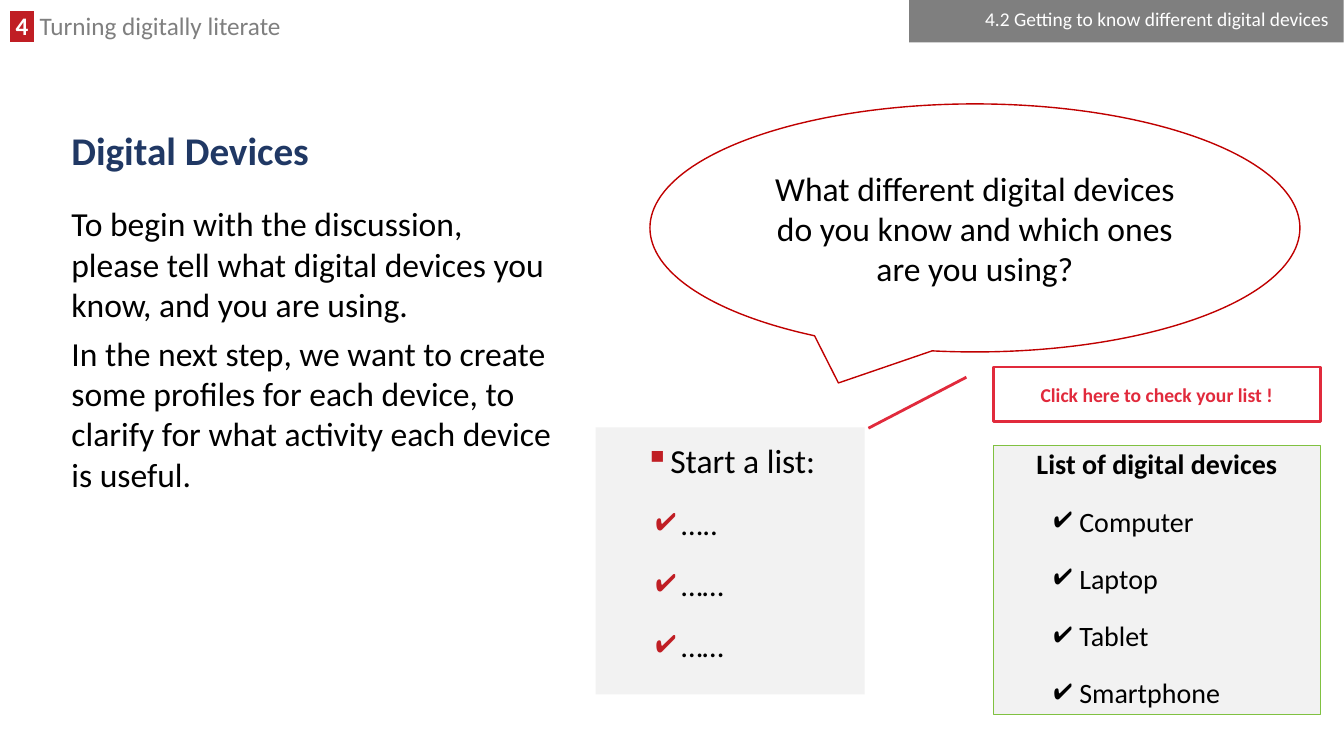
"""Builds the discussion slide about digital devices."""
from lxml import etree
from pptx import Presentation
from pptx.dml.color import RGBColor
from pptx.enum.shapes import MSO_SHAPE
from pptx.enum.text import MSO_ANCHOR, PP_ALIGN
from pptx.oxml.ns import qn
from pptx.util import Cm, Pt

RECTANGLE = MSO_SHAPE.RECTANGLE
SPEECH_BUBBLE = MSO_SHAPE.OVAL_CALLOUT
LINE_CALLOUT = MSO_SHAPE.LINE_CALLOUT_1
TOP, MIDDLE = MSO_ANCHOR.TOP, MSO_ANCHOR.MIDDLE
CENTER, RIGHT = PP_ALIGN.CENTER, PP_ALIGN.RIGHT

BLACK, WHITE, GREY, PALE = "000000", "FFFFFF", "7F7F7F", "F2F2F2"
RED, NAVY, GREEN, DARK_RED, BRIGHT_RED = "C01E24", "203864", "80C141", "C00000", "E12A3C"


def rgb(value):
    return RGBColor.from_string(value)


class SlideBuilder:
    def __init__(self, slide, font_name="Calibri"):
        self.slide = slide
        self.font_name = font_name

    def prepare(self, shape, anchor):
        frame = shape.text_frame
        frame.word_wrap = True
        frame.vertical_anchor = anchor
        return frame

    def text_box(self, box, anchor=TOP):
        shape = self.slide.shapes.add_textbox(*map(Cm, box))
        return self.prepare(shape, anchor)

    def panel(self, kind, box, fill, line=None, width=1, anchor=MIDDLE, adjustments=()):
        shape = self.slide.shapes.add_shape(kind, *map(Cm, box))
        shape.shadow.inherit = False
        shape.fill.solid()
        shape.fill.fore_color.rgb = rgb(fill)
        if line:
            shape.line.color.rgb = rgb(line)
            shape.line.width = Pt(width)
        else:
            shape.line.fill.background()
        for index, value in enumerate(adjustments):
            shape.adjustments[index] = value
        return self.prepare(shape, anchor)

    def paragraph(self, frame, bullet=None, bullet_color=RED, indent=0.64, **formats):
        paragraph = frame.paragraphs[0]
        if paragraph.runs:
            paragraph = frame.add_paragraph()
        for name, value in formats.items():
            setattr(paragraph, name, value)
        if bullet:
            properties = paragraph._p.get_or_add_pPr()
            properties.set("marL", str(Cm(indent)))
            properties.set("indent", str(-Cm(0.64)))
            color = etree.SubElement(properties, qn("a:buClr"))
            etree.SubElement(color, qn("a:srgbClr"), val=bullet_color)
            etree.SubElement(properties, qn("a:buChar"), char=bullet)
        return paragraph

    def run(self, paragraph, text, size, color=BLACK, bold=False, highlight=None):
        run = paragraph.add_run()
        run.text = text
        formats = {"size": Pt(size), "bold": bold, "name": self.font_name}
        for name, value in formats.items():
            setattr(run.font, name, value)
        run.font.color.rgb = rgb(color)
        if highlight:
            marker = etree.Element(qn("a:highlight"))
            etree.SubElement(marker, qn("a:srgbClr"), val=highlight)
            run.font._element.find(qn("a:solidFill")).addnext(marker)

    def check_list(self, frame, items, size, color):
        for item in items:
            paragraph = self.paragraph(frame, "✔", color, 1.91, level=1,
                                       line_spacing=1.2, space_before=Pt(12))
            self.run(paragraph, item, size)


def main():
    presentation = Presentation()
    presentation.slide_width, presentation.slide_height = Cm(33.87), Cm(19.05)
    builder = SlideBuilder(presentation.slides.add_slide(presentation.slide_layouts[6]))

    chapter = builder.paragraph(builder.text_box((0, 0.28, 24.18, 0.89)), line_spacing=0.8)
    builder.run(chapter, " 4 ", 18, WHITE, True, RED)
    builder.run(chapter, " Turning digitally literate", 18, GREY)

    title = builder.text_box((1.55, 3, 30.73, 1.68), MIDDLE)
    builder.run(builder.paragraph(title, line_spacing=0.9), "Digital Devices", 28, NAVY, True)

    body = builder.text_box((1.55, 5, 12.7, 13.51))
    builder.run(builder.paragraph(body), "To begin with the discussion, please tell what "
                "digital devices you know, and you are using.", 24)
    builder.run(builder.paragraph(body, space_before=Pt(6), space_after=Pt(6)),
                "In the next step, we want to create some profiles for each device, "
                "to clarify for what activity each device is useful.", 24)

    section = builder.panel(RECTANGLE, (22.91, 0, 10.95, 1.07), GREY)
    builder.run(builder.paragraph(section, alignment=RIGHT, line_spacing=0.7),
                "4.2 Getting to know different digital devices ", 13.9, WHITE)

    start_list = builder.panel(RECTANGLE, (15.01, 10.77, 6.78, 6.73), PALE, anchor=TOP)
    builder.run(builder.paragraph(start_list, "▪", line_spacing=1.2), "Start a list:", 24)
    builder.check_list(start_list, ("…..", "……", "……"), 22, RED)

    question = builder.panel(SPEECH_BUBBLE, (16.38, 2.62, 16.38, 6.25), WHITE, DARK_RED,
                             adjustments=(-0.21, 0.625))
    builder.run(builder.paragraph(question, alignment=CENTER),
                "What different digital devices do you know and which ones are you using?", 24)

    devices = builder.panel(RECTANGLE, (25.04, 11.23, 8.23, 6.78), PALE, GREEN, 0.75, TOP)
    builder.run(builder.paragraph(devices, line_spacing=0.9),
                "List of digital devices", 20, bold=True)
    builder.check_list(devices, ("Computer", "Laptop", "Tablet", "Smartphone"), 20, BLACK)

    hint = builder.panel(LINE_CALLOUT, (25.04, 9.25, 8.23, 1.37), WHITE, BRIGHT_RED, 2)
    builder.run(builder.paragraph(hint, alignment=CENTER),
                "Click here to check your list !", 14, BRIGHT_RED, True)

    presentation.save("out.pptx")


if __name__ == "__main__":
    main()
